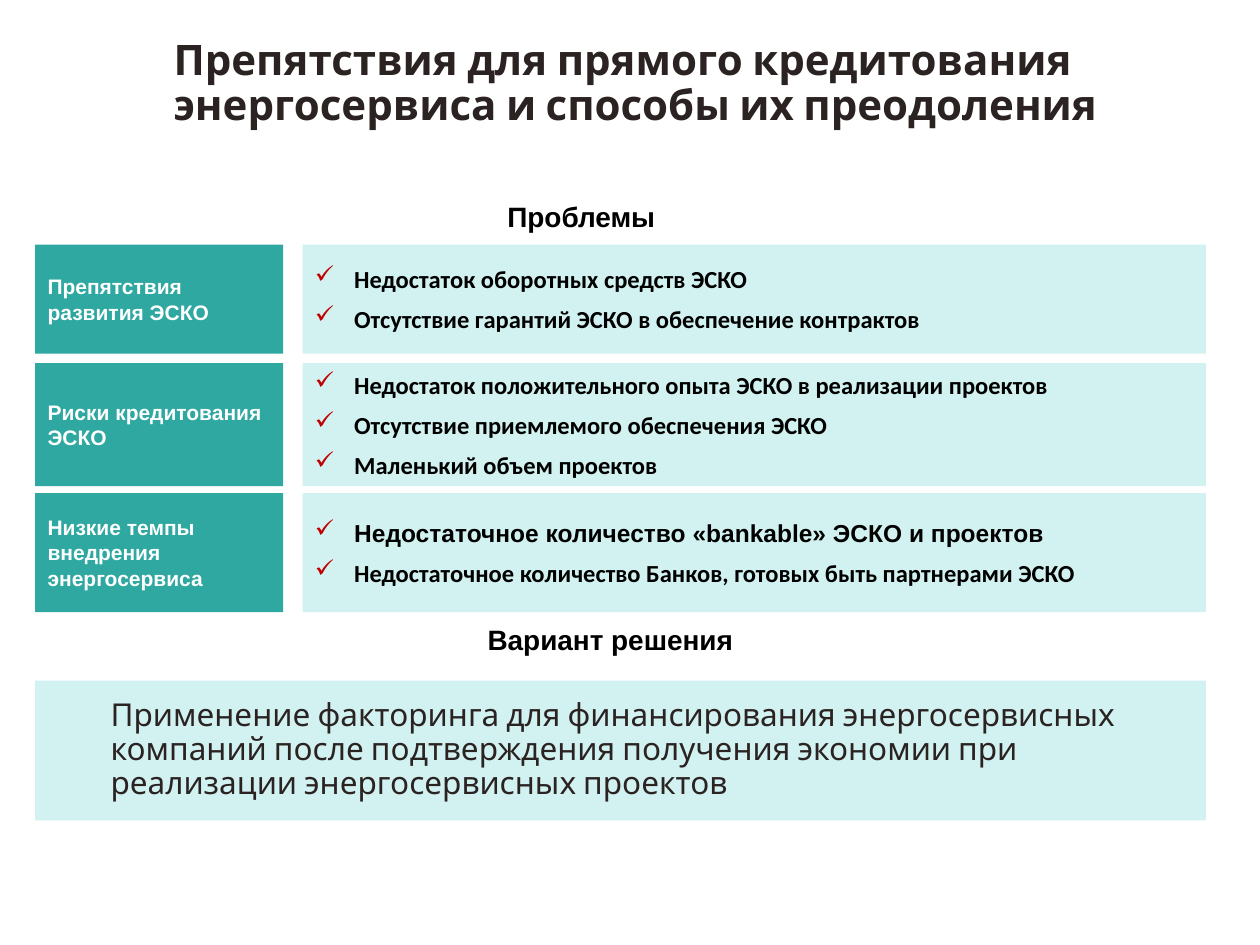
from lxml.etree import SubElement
from pptx import Presentation
from pptx.dml.color import RGBColor
from pptx.enum.shapes import MSO_SHAPE
from pptx.enum.text import MSO_ANCHOR, PP_ALIGN
from pptx.oxml.ns import qn
from pptx.util import Cm, Pt

HUES = {"teal": "2EA8A0", "pale": "D1F2F0", "dark": "2B2222",
        "black": "000000", "white": "FFFFFF", "red": "C00000"}
LEFT, SPLIT, RIGHT = 0.71, 6.1, 24.31
LABEL = 5.0

# Rows: top, height, label, list of (text, font)
ROWS = [
    (4.93, 2.2, "Препятствия развития ЭСКО", [
        ("Недостаток оборотных средств ЭСКО", "Calibri"),
        ("Отсутствие гарантий ЭСКО в обеспечение контрактов", "Calibri")]),
    (7.32, 2.48, "Риски кредитования ЭСКО", [
        ("Недостаток положительного опыта ЭСКО в реализации проектов", "Calibri"),
        ("Отсутствие приемлемого обеспечения ЭСКО", "Calibri"),
        ("Маленький объем проектов", "Calibri")]),
    (9.94, 2.4, "Низкие темпы внедрения энергосервиса", [
        ("Недостаточное количество «bankable» ЭСКО и проектов", "Arial"),
        ("Недостаточное количество Банков, готовых быть партнерами ЭСКО",
         "Calibri")]),
]


def color(name):
    return RGBColor.from_string(HUES[name])


def set_frame(shape, left=0.25, right=0.25, anchor=MSO_ANCHOR.MIDDLE):
    frame = shape.text_frame
    frame.word_wrap = True
    frame.vertical_anchor = anchor
    frame.margin_left, frame.margin_right = Cm(left), Cm(right)
    frame.margin_top = frame.margin_bottom = Cm(0.13)
    return frame


def add_box(slide, left, top, width, height, hue):
    box = slide.shapes.add_shape(MSO_SHAPE.RECTANGLE, Cm(left), Cm(top),
                                 Cm(width), Cm(height))
    box.shadow.inherit = False
    box.fill.solid()
    box.fill.fore_color.rgb = color(hue)
    box.line.fill.background()
    return box


def add_area(slide, left, top, width, height):
    return slide.shapes.add_textbox(Cm(left), Cm(top), Cm(width), Cm(height))


def add_run(para, text, size, hue, font="Arial", bold=True):
    para.alignment = PP_ALIGN.LEFT
    run = para.add_run()
    run.text = text
    run.font.name, run.font.size, run.font.bold = font, Pt(size), bold
    run.font.color.rgb = color(hue)


def indent(para, left, first=0):
    props = para._p.get_or_add_pPr()
    props.set("marL", str(Cm(left)))
    props.set("indent", str(Cm(first)))
    return props


def add_check(para):
    props = indent(para, 1.04, -0.79)
    tint = SubElement(props, qn("a:buClr"))
    SubElement(tint, qn("a:srgbClr"), val=HUES["red"])
    SubElement(props, qn("a:buChar"), char="✓")
    para.space_after = Pt(6)


def add_row(slide, top, height, label, items):
    box = add_box(slide, LEFT, top, LABEL, height, "teal")
    add_run(set_frame(box).paragraphs[0], label, 12, "white")
    box = add_box(slide, SPLIT, top, RIGHT - SPLIT, height, "pale")
    frame = set_frame(box, left=0)
    for num, (text, font) in enumerate(items):
        para = frame.add_paragraph() if num else frame.paragraphs[0]
        add_check(para)
        add_run(para, text, 14, "black", font)


def add_head(slide, top, text, inset):
    frame = set_frame(add_area(slide, 8.84, top, 6.73, 0.84), inset, 0)
    para = frame.paragraphs[0]
    indent(para, 0.99)
    add_run(para, text, 16, "black")


def main():
    deck = Presentation()
    deck.slide_width, deck.slide_height = Cm(25.4), Cm(19.05)
    slide = deck.slides.add_slide(deck.slide_layouts[6])

    # Title
    area = add_area(slide, 3.25, 0.66, 21.62, 2.31)
    para = set_frame(area, anchor=MSO_ANCHOR.TOP).paragraphs[0]
    para.line_spacing = 0.9
    add_run(para, "Препятствия для прямого кредитования энергосервиса "
            "и способы их преодоления", 24, "dark", "Cabin")

    # Problems
    add_head(slide, 3.94, "Проблемы", 0.4)
    for row in ROWS:
        add_row(slide, *row)

    # Solution
    add_head(slide, 12.47, "Вариант решения", 0)
    box = add_box(slide, LEFT, 13.72, RIGHT - LEFT, 2.82, "pale")
    para = set_frame(box).paragraphs[0]
    para.level = 1
    indent(para, 1.27)
    para.line_spacing = 0.9
    add_run(para, "Применение факторинга для финансирования энергосервисных "
            "компаний после подтверждения получения экономии при реализации "
            "энергосервисных проектов", 18, "dark", "Cabin", False)

    deck.save("out.pptx")


if __name__ == "__main__":
    main()
